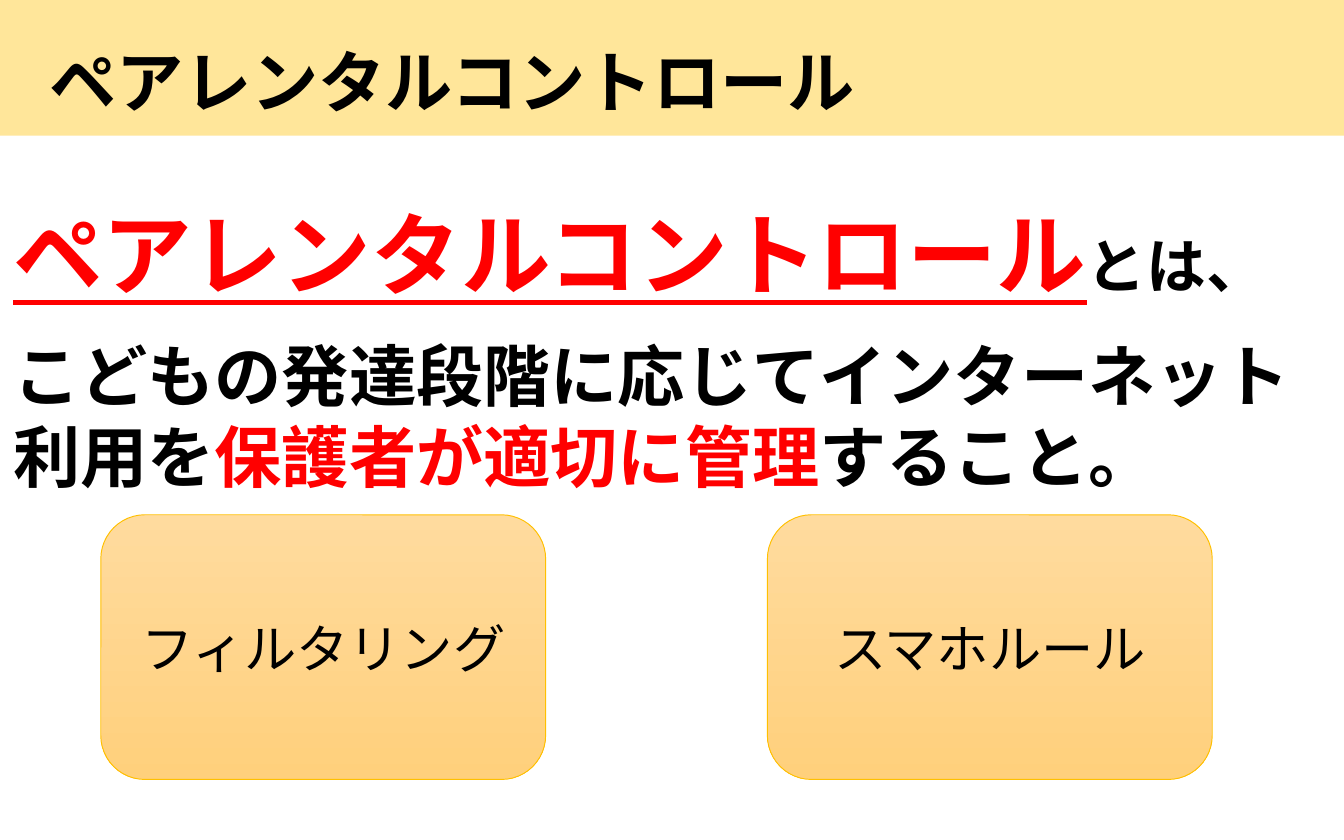
from lxml.etree import SubElement
from pptx import Presentation
from pptx.dml.color import RGBColor
from pptx.enum.shapes import MSO_SHAPE
from pptx.enum.text import MSO_ANCHOR, MSO_AUTO_SIZE, PP_ALIGN
from pptx.oxml.ns import qn
from pptx.util import Pt

FONT = "Noto Sans CJK JP"
BLACK = RGBColor(0x00, 0x00, 0x00)
RED = RGBColor(0xFF, 0x00, 0x00)
BANNER = RGBColor(0xFF, 0xE6, 0x9A)
CARD_TOP = RGBColor(0xFF, 0xDB, 0x9E)
CARD_BOTTOM = RGBColor(0xFF, 0xD0, 0x7C)
CARD_LINE = RGBColor(0xFF, 0xC0, 0x00)


def add_run(p, text, size=36, color=BLACK, bold=True, underline=False):
    r = p.add_run()
    r.text = text
    r.font.size = Pt(size)
    r.font.bold = bold
    r.font.underline = underline
    r.font.color.rgb = color
    r.font.name = FONT
    SubElement(r.font._element, qn("a:ea"), typeface=FONT)


def format_frame(tf):
    tf.word_wrap = True
    tf.auto_size = MSO_AUTO_SIZE.NONE
    tf.vertical_anchor = MSO_ANCHOR.TOP
    tf.margin_top = Pt(6.4)


def add_paragraph(p, line, *runs, before=0):
    p.alignment = PP_ALIGN.LEFT
    p.line_spacing = Pt(line)
    p.space_before = Pt(before)
    for text, fmt in runs:
        add_run(p, text, **fmt)


def add_header(slide, x, y, w, h):
    title = slide.shapes.title
    sp = slide.shapes.add_shape(MSO_SHAPE.RECTANGLE, Pt(x), Pt(y), Pt(w), Pt(h))
    sp.shadow.inherit = False
    sp.fill.solid()
    sp.fill.fore_color.rgb = BANNER
    sp.line.fill.background()
    title._element.addprevious(sp._element)

    title.left, title.top = Pt(x + 22.3), Pt(y + 22.3)
    title.width, title.height = Pt(w - 27.4), Pt(51.1)
    tf = title.text_frame
    format_frame(tf)
    add_paragraph(tf.paragraphs[0], 43.5, ("ペアレンタルコントロール", {}))


def add_definition(slide, x, y, w, h):
    tf = slide.shapes.add_textbox(Pt(x), Pt(y), Pt(w), Pt(h)).text_frame
    format_frame(tf)
    add_paragraph(
        tf.paragraphs[0], 58,
        ("ペアレンタルコントロール", dict(size=48, color=RED, underline=True)),
        ("とは、", dict(size=32)),
    )
    add_paragraph(
        tf.add_paragraph(), 43.5,
        ("こどもの発達段階に応じてインターネット利用を", {}),
        ("保護者が適切に管理", dict(color=RED)),
        ("すること。", {}),
        before=14.5,
    )


def add_card(slide, text, x, y, w, h):
    sp = slide.shapes.add_shape(
        MSO_SHAPE.ROUNDED_RECTANGLE, Pt(x), Pt(y), Pt(w), Pt(h))
    sp.shadow.inherit = False
    sp.fill.gradient()
    sp.fill.gradient_angle = 270
    for stop, color in zip(sp.fill.gradient_stops, (CARD_TOP, CARD_BOTTOM)):
        stop.color.rgb = color
    sp.line.color.rgb = CARD_LINE
    sp.line.width = Pt(0.5)
    tf = sp.text_frame
    tf.word_wrap = True
    tf.vertical_anchor = MSO_ANCHOR.MIDDLE
    p = tf.paragraphs[0]
    p.alignment = PP_ALIGN.CENTER
    add_run(p, text, size=28, bold=False)


def main():
    prs = Presentation()
    prs.slide_width, prs.slide_height = Pt(720), Pt(450)
    slide = prs.slides.add_slide(prs.slide_layouts[5])
    add_header(slide, -2.9, -7.2, 722.9, 79.9)
    add_definition(slide, 0, 100, 720, 167)
    for i, text in enumerate(("フィルタリング", "スマホルール")):
        add_card(slide, text, 54 + i * 357.1, 275.8, 238.3, 141.8)
    prs.save("out.pptx")


if __name__ == "__main__":
    main()
